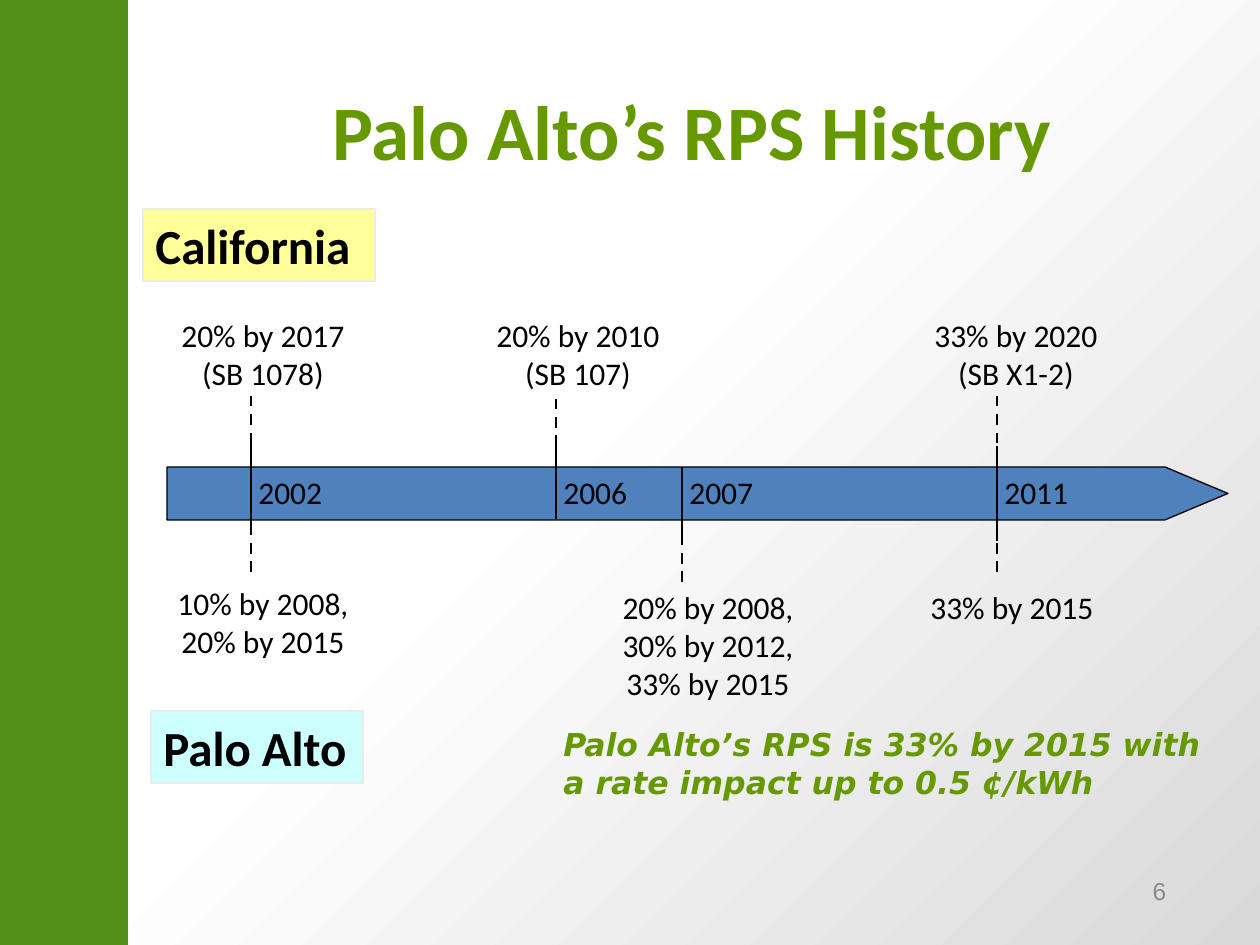
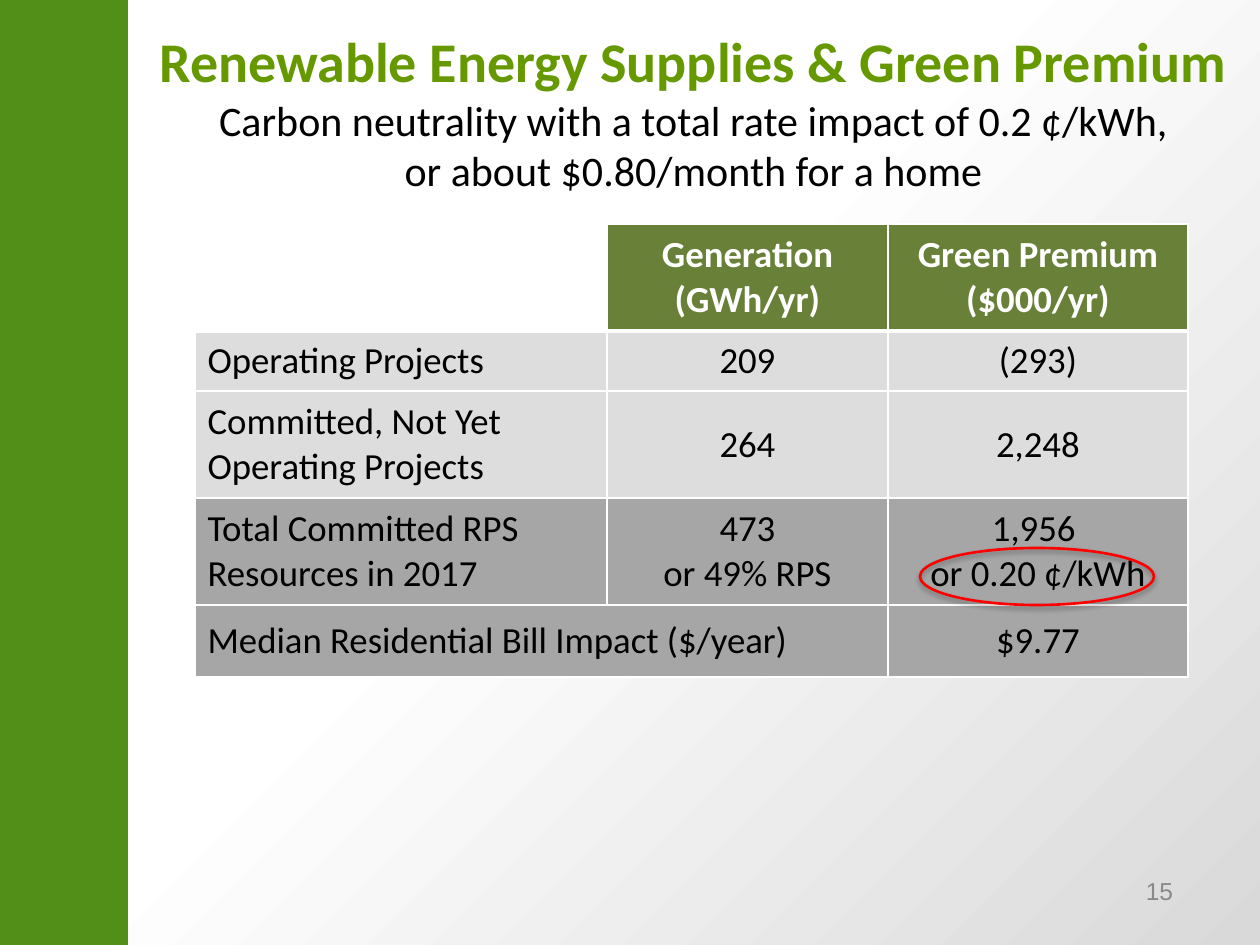
"""Build two slides on renewable energy: a timeline of goals and a table of supplies."""
from lxml.etree import SubElement
from pptx import Presentation
from pptx.dml.color import RGBColor
from pptx.enum.dml import MSO_LINE
from pptx.enum.shapes import MSO_CONNECTOR, MSO_SHAPE
from pptx.enum.text import MSO_ANCHOR, MSO_AUTO_SIZE, PP_ALIGN
from pptx.oxml.ns import qn
from pptx.util import Emu, Pt

EMU_PER_PX = 914400 / 126
SLIDE_SIZE = (1260, 945)
BAND_GREEN, TITLE_GREEN, HEADER_GREEN = "518F19", "669900", "688037"
BLACK, WHITE, RED, PAGE_GREY = "000000", "FFFFFF", "FF0000", "898989"
ARROW_BLUE, TAG_LINE = "4F81BD", "EEECE1"
LIGHT_ROW, DARK_ROW = "DDDDDD", "A6A6A6"
CENTER = PP_ALIGN.CENTER

TIMELINE_ARROW = (167, 467, 1061, 53)
MILESTONES = [
    {"year": "2002", "x": 251, "tick": (436, 530), "dash": (393, 572)},
    {"year": "2006", "x": 556, "tick": (446, 519), "dash": (393, 446)},
    {"year": "2007", "x": 682, "tick": (467, 541), "dash": (530, 582)},
    {"year": "2011", "x": 997, "tick": (446, 541), "dash": (393, 572)},
]
GOALS = [
    ("20% by 2017\n(SB 1078)", (168, 310, 190, 88)),
    ("20% by 2010\n(SB 107)", (483, 310, 190, 88)),
    ("33% by 2020\n(SB X1-2)", (921, 310, 190, 88)),
    ("10% by 2008,\n20% by 2015", (164, 578, 198, 88)),
    ("20% by 2008,\n30% by 2012,\n33% by 2015", (609, 582, 198, 126)),
    ("33% by 2015", (917, 582, 190, 50)),
]
TAGS = [
    ("California", (143, 209, 232, 72), "FFFF99"),
    ("Palo Alto", (151, 711, 212, 72), "CCFFFF"),
]
CONCLUSION = "Palo Alto’s RPS is 33% by 2015 with a rate impact up to 0.5 ¢/kWh"

SUBTITLE = "Carbon neutrality with a total rate impact of 0.2 ¢/kWh,\nor about $0.80/month for a home"
TABLE_ORIGIN = (195, 224)
COLUMN_WIDTHS = (412, 281, 300)
SUPPLY_ROWS = [
    (107, HEADER_GREEN, ("", "Generation (GWh/yr)", "Green Premium ($000/yr)")),
    (60, LIGHT_ROW, ("Operating Projects", "209", "(293)")),
    (107, LIGHT_ROW, ("Committed, Not Yet Operating Projects", "264", "2,248")),
    (107, DARK_ROW, ("Total Committed RPS Resources in 2017", "473\nor 49% RPS", "1,956 \nor 0.20 ¢/kWh")),
    (72, DARK_ROW, ("Median Residential Bill Impact ($/year)", None, "$9.77")),
]
RATE_HIGHLIGHT = (920, 548, 234, 57)


def px(length):
    return Emu(round(length * EMU_PER_PX))


def color(value):
    return RGBColor.from_string(value)


def write(frame, text, size=18, fill=BLACK, font="Calibri", bold=False, italic=False, align=PP_ALIGN.LEFT):
    for line in text.split("\n"):
        paragraph = frame.add_paragraph() if frame.text else frame.paragraphs[0]
        paragraph.alignment = align
        run = paragraph.add_run()
        run.text = line
        run.font.name, run.font.size = font, Pt(size)
        run.font.bold, run.font.italic = bold, italic
        run.font.color.rgb = color(fill)


def add_text(slide, text, box, wrap=True, anchor=MSO_ANCHOR.TOP, **text_format):
    frame = slide.shapes.add_textbox(*map(px, box)).text_frame
    frame.word_wrap, frame.vertical_anchor = wrap, anchor
    write(frame, text, **text_format)
    return frame


def add_shape(slide, kind, box, fill=None, line=BLACK, width=0.75):
    shape = slide.shapes.add_shape(kind, *map(px, box))
    shape.shadow.inherit = False
    if fill:
        shape.fill.solid()
        shape.fill.fore_color.rgb = color(fill)
    else:
        shape.fill.background()
    shape.line.color.rgb = color(line)
    shape.line.width = Pt(width)
    return shape


def add_vertical_line(slide, x, ends, dash=None):
    top, bottom = ends
    connector = slide.shapes.add_connector(MSO_CONNECTOR.STRAIGHT, px(x), px(bottom), px(x), px(top))
    connector.line.color.rgb = color(BLACK)
    connector.line.width = Pt(1.5)
    if dash:
        connector.line.dash_style = dash
    SubElement(connector._element.spPr, qn("a:effectLst"))


def add_base_slide(presentation, title, title_box, title_size, page):
    slide = presentation.slides.add_slide(presentation.slide_layouts[6])
    background = slide.background.fill
    background.gradient()
    background.gradient_angle = 315
    for stop, (position, shade) in zip(background.gradient_stops, ((0.45, WHITE), (1, "D9D9D9"))):
        stop.position = position
        stop.color.rgb = color(shade)
    add_shape(slide, MSO_SHAPE.RECTANGLE, (0, 0, 127, SLIDE_SIZE[1]), BAND_GREEN, BAND_GREEN)
    add_text(slide, page, (1097, 872, 125, 38), anchor=MSO_ANCHOR.MIDDLE,
             size=14, font="Arial", fill=PAGE_GREY, align=CENTER)
    title_frame = add_text(slide, title, title_box, anchor=MSO_ANCHOR.MIDDLE,
                           size=title_size, fill=TITLE_GREEN, bold=True, align=CENTER)
    return slide, title_frame


def build_history(presentation):
    slide, _ = add_base_slide(presentation, "Palo Alto’s RPS History", (134, 67, 1116, 126), 44, "6")
    arrow = add_shape(slide, MSO_SHAPE.RIGHT_ARROW, TIMELINE_ARROW, ARROW_BLUE)
    arrow.adjustments[0], arrow.adjustments[1] = 1, 1.19
    for milestone in MILESTONES:
        x = milestone["x"]
        add_vertical_line(slide, x, milestone["tick"])
        add_vertical_line(slide, x, milestone["dash"], MSO_LINE.DASH)
        add_text(slide, milestone["year"], (x - 5, TIMELINE_ARROW[1], 90, 50), wrap=False)
    for goal, box in GOALS:
        add_text(slide, goal, box, wrap=False, align=CENTER)
    for name, box, fill in TAGS:
        frame = add_shape(slide, MSO_SHAPE.RECTANGLE, box, fill, TAG_LINE).text_frame
        frame.word_wrap, frame.vertical_anchor = True, MSO_ANCHOR.TOP
        frame.auto_size = MSO_AUTO_SIZE.SHAPE_TO_FIT_TEXT
        write(frame, name, size=28, bold=True)
    add_text(slide, CONCLUSION, (551, 719, 678, 89), font="DejaVu Sans", fill=TITLE_GREEN, bold=True, italic=True)


def set_borders(cell, row_index):
    heavy_side = {0: "lnB", 1: "lnT"}.get(row_index)
    for side in ("lnL", "lnR", "lnT", "lnB"):
        width = Pt(3 if side == heavy_side else 1)
        border = SubElement(cell._tc.get_or_add_tcPr(), qn(f"a:{side}"), w=str(width))
        SubElement(SubElement(border, qn("a:solidFill")), qn("a:srgbClr"), val=WHITE)


def add_supply_table(slide):
    heights = [height for height, _, _ in SUPPLY_ROWS]
    box = (*TABLE_ORIGIN, sum(COLUMN_WIDTHS), sum(heights))
    table = slide.shapes.add_table(len(heights), len(COLUMN_WIDTHS), *map(px, box)).table
    table.horz_banding = False
    for column, width in zip(table.columns, COLUMN_WIDTHS):
        column.width = px(width)
    for row_index, (height, fill, texts) in enumerate(SUPPLY_ROWS):
        table.rows[row_index].height = px(height)
        is_header = row_index == 0
        for column_index, text in enumerate(texts):
            cell = table.cell(row_index, column_index)
            set_borders(cell, row_index)
            cell.vertical_anchor = MSO_ANCHOR.MIDDLE
            if text == "":
                cell.fill.background()
                continue
            cell.fill.solid()
            cell.fill.fore_color.rgb = color(fill)
            if text is None:
                table.cell(row_index, column_index - 1).merge(cell)
                continue
            write(cell.text_frame, text, size=21, bold=is_header, fill=WHITE if is_header else BLACK,
                  align=CENTER if column_index else PP_ALIGN.LEFT)


def add_soft_shadow(shape):
    effects = shape._element.spPr.find(qn("a:effectLst"))
    shadow = SubElement(effects, qn("a:outerShdw"), blurRad=str(Pt(3.1)), dist=str(Pt(1.8)),
                        dir="5400000", rotWithShape="0")
    shade = SubElement(shadow, qn("a:srgbClr"), val=BLACK)
    SubElement(shade, qn("a:alpha"), val="35000")


def build_supplies(presentation):
    slide, title_frame = add_base_slide(
        presentation, "Renewable Energy Supplies & Green Premium", (127, 11, 1133, 200), 32, "15")
    write(title_frame, SUBTITLE, size=24, align=CENTER)
    add_supply_table(slide)
    add_soft_shadow(add_shape(slide, MSO_SHAPE.OVAL, RATE_HIGHLIGHT, line=RED, width=1.5))


def main():
    presentation = Presentation()
    presentation.slide_width, presentation.slide_height = map(px, SLIDE_SIZE)
    build_history(presentation)
    build_supplies(presentation)
    presentation.save("out.pptx")


if __name__ == "__main__":
    main()
